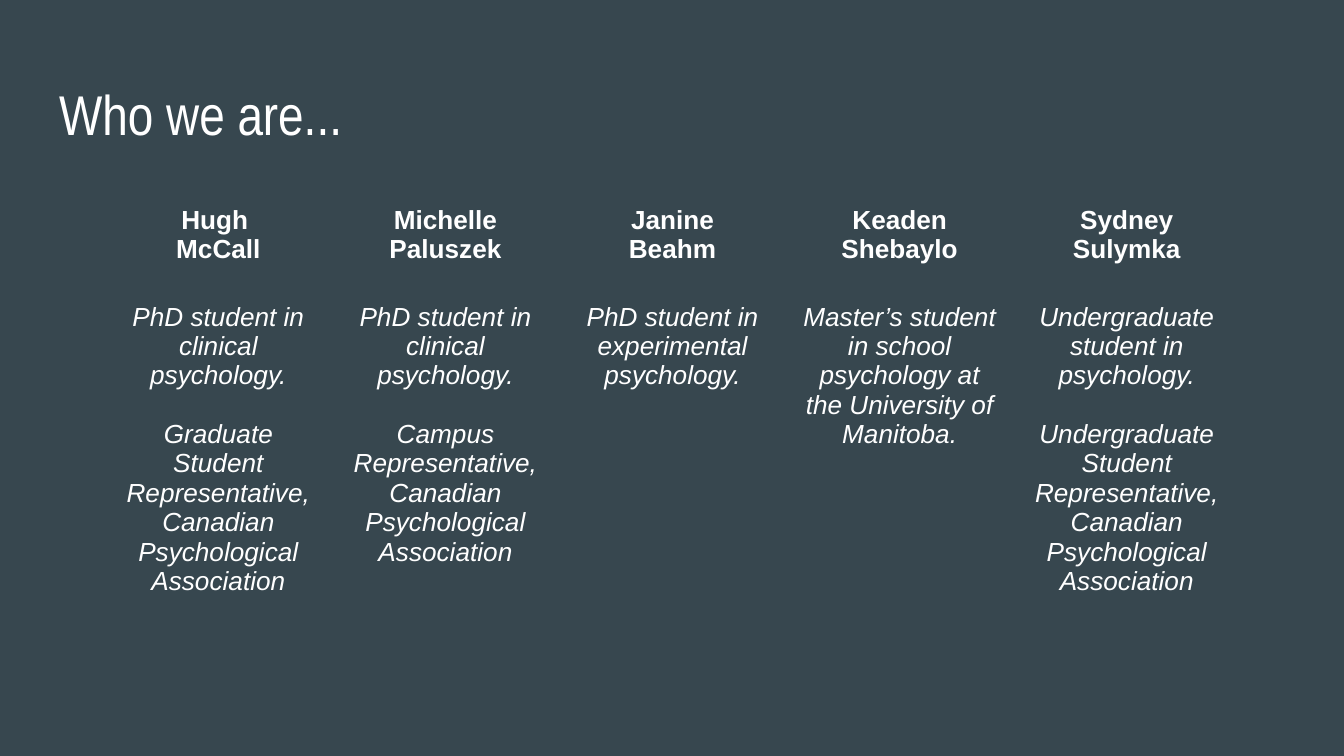
import pptx
import pptx.util
import pptx.dml.color
import pptx.enum.text
import pptx.oxml.ns

Inches = pptx.util.Inches
Pt = pptx.util.Pt

COLORS = {"background": "37474F", "text": "FFFFFF"}
PLAIN_TABLE_STYLE = "{2D5ABB26-0587-4C30-8999-92F81FD0307C}"
MARGIN = Inches(0.1)
CLINICAL = "PhD student in clinical psychology."
ASSOCIATION = "Representative, Canadian Psychological Association"
MEMBERS = [
    (["Hugh ", "McCall"], [CLINICAL, f"Graduate Student {ASSOCIATION}"]),
    (["Michelle Paluszek"], [CLINICAL, f"Campus {ASSOCIATION}"]),
    (["Janine", "Beahm"], ["PhD student in experimental psychology."]),
    (["Keaden", "Shebaylo"],
     ["Master’s student in school psychology at the University of Manitoba."]),
    (["Sydney Sulymka"],
     ["Undergraduate student in psychology.", f"Undergraduate Student {ASSOCIATION}"]),
]


def color(name):
    return pptx.dml.color.RGBColor.from_string(COLORS[name])


def write_text(frame, lines, size=14, font="Arial", bold=False, italic=False,
               align=pptx.enum.text.PP_ALIGN.CENTER, gap=0):
    for index, line in enumerate(lines):
        para = frame.add_paragraph() if index else frame.paragraphs[0]
        para.alignment = align
        para.line_spacing = 1.0
        para.space_before = Pt(gap if index else 0)
        para.space_after = Pt(0)
        span = para.add_run()
        span.text = line
        span.font.size = Pt(size)
        span.font.name = font
        span.font.bold = bold
        span.font.italic = italic
        span.font.color.rgb = color("text")


def set_margins(target):
    target.margin_left = target.margin_right = MARGIN
    target.margin_top = target.margin_bottom = MARGIN


def add_title(page, text):
    title = page.shapes.title
    title.left, title.top = Inches(0.34), Inches(0.49)
    title.width, title.height = Inches(9.32), Inches(0.63)
    frame = title.text_frame
    set_margins(frame)
    frame.word_wrap = True
    frame.auto_size = pptx.enum.text.MSO_AUTO_SIZE.NONE
    frame.vertical_anchor = pptx.enum.text.MSO_ANCHOR.TOP
    write_text(frame, [text], size=30, font="Arial Narrow",
               align=pptx.enum.text.PP_ALIGN.LEFT)


def add_member_table(page):
    column_width = Inches(1.69)
    row_heights = [Inches(0.72), Inches(2.41)]
    holder = page.shapes.add_table(
        len(row_heights), len(MEMBERS), Inches(0.78), Inches(1.43),
        column_width * len(MEMBERS), sum(row_heights))
    table = holder.table
    table.first_row = table.horz_banding = False
    style = table._tbl.tblPr.find(pptx.oxml.ns.qn("a:tableStyleId"))
    style.text = PLAIN_TABLE_STYLE
    for row, height in zip(table.rows, row_heights):
        row.height = height
    for column, (name, roles) in enumerate(MEMBERS):
        table.columns[column].width = column_width
        write_text(table.cell(0, column).text_frame, name, bold=True)
        write_text(table.cell(1, column).text_frame, roles, italic=True, gap=15.75)
    for cell in table.iter_cells():
        cell.fill.background()
        cell.vertical_anchor = pptx.enum.text.MSO_ANCHOR.TOP
        set_margins(cell)


def main():
    deck = pptx.Presentation()
    deck.slide_width = Inches(10)
    deck.slide_height = deck.slide_width * 9 // 16
    page = deck.slides.add_slide(deck.slide_layouts[5])
    page.background.fill.solid()
    page.background.fill.fore_color.rgb = color("background")
    add_member_table(page)
    add_title(page, "Who we are...")
    deck.save("out.pptx")


if __name__ == "__main__":
    main()
